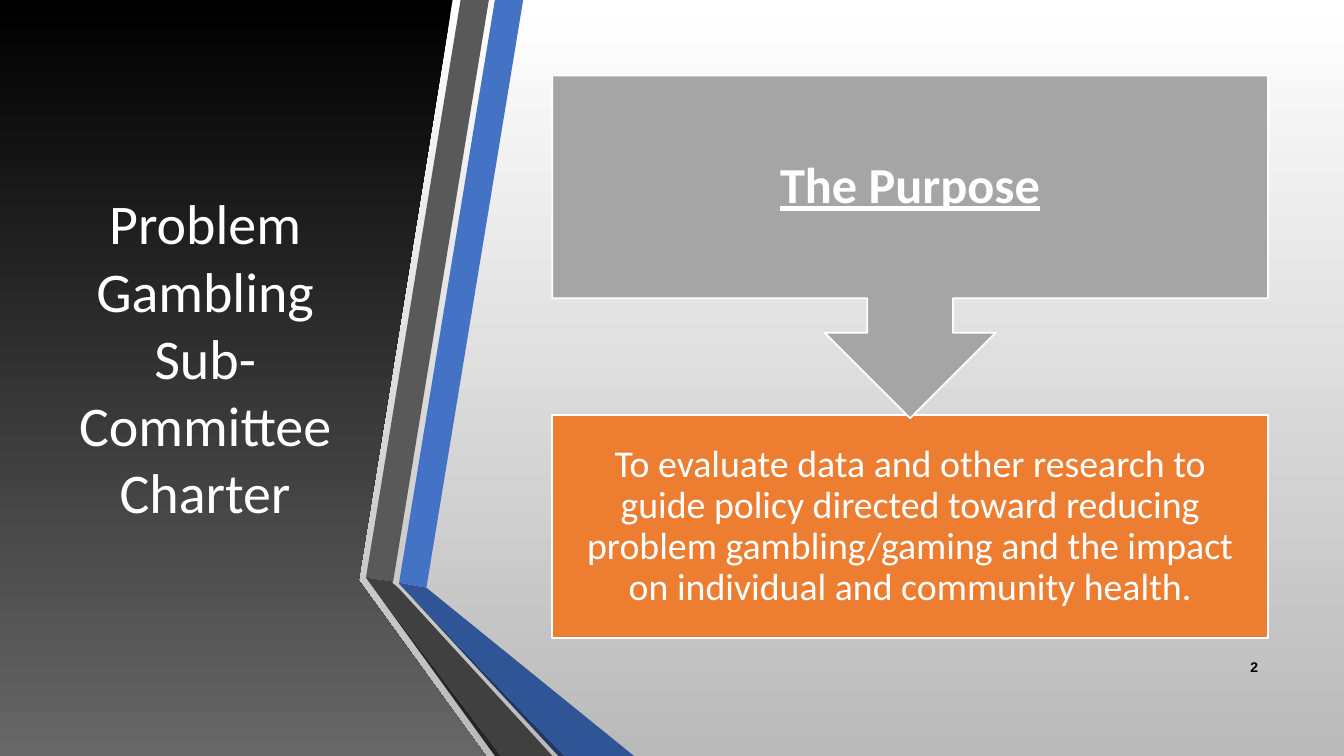
from pptx import Presentation
from pptx.dml.color import RGBColor
from pptx.enum.shapes import MSO_SHAPE
from pptx.enum.text import MSO_ANCHOR, MSO_AUTO_SIZE, PP_ALIGN
from pptx.util import Pt

WHITE = RGBColor(0xFF, 0xFF, 0xFF)
BLACK = RGBColor(0x00, 0x00, 0x00)
SILVER = RGBColor(0xBA, 0xBA, 0xBA)
SMOKE = RGBColor(0x67, 0x67, 0x67)
GRAY = RGBColor(0xA5, 0xA5, 0xA5)
ORANGE = RGBColor(0xED, 0x7D, 0x31)
BLUE = RGBColor(0x44, 0x72, 0xC4)
DEEP_BLUE = RGBColor(0x2F, 0x55, 0x97)
NAVY = RGBColor(0x20, 0x38, 0x64)
STEEL = RGBColor(0x59, 0x59, 0x59)
CHARCOAL = RGBColor(0x40, 0x40, 0x40)
COAL = RGBColor(0x26, 0x26, 0x26)

WIDTH, HEIGHT = 960, 540
BOX_LEFT, BOX_WIDTH, BOX_HEIGHT = 394.5, 511.2, 159.1
PURPOSE_TOP, DETAIL_TOP, CALLOUT_HEIGHT = 54, 296.6, 244.8

PANEL = [(0, 0), (323.3, 0), (256.3, 414), (256.3, 414.7), (347, HEIGHT), (0, HEIGHT)]
RIBBON = [
    (BLUE, [(285.1, 416.2), (304.6, 419.8), (373.7, 0), (353.5, 0)]),
    (STEEL, [(349.2, 0), (329, 0), (261.4, 412.6), (280.8, 415.4)]),
    (COAL, [(261.4, 412.6), (353.5, HEIGHT), (357.8, HEIGHT)]),
    (NAVY, [(285.1, 416.9), (398.9, HEIGHT), (403.2, HEIGHT)]),
    (DEEP_BLUE, [(285.1, 416.9), (403.2, HEIGHT), (452.9, HEIGHT),
                 (304.6, 419.8), (285.1, 416.2)]),
    (CHARCOAL, [(394.6, HEIGHT), (284.4, 419.8), (280.1, 416.2),
                (280.8, 415.4), (261.4, 412.6), (357.8, HEIGHT)]),
]


def fill_gradient(fill, top, bottom):
    fill.gradient()
    fill.gradient_angle = 270
    for stop, position, color in zip(fill.gradient_stops, (0, 1), (top, bottom)):
        stop.position = position
        stop.color.rgb = color


def fill_solid(sp, color):
    sp.fill.solid()
    sp.fill.fore_color.rgb = color


def add_polygon(shapes, points):
    (x, y), *rest = [(Pt(px), Pt(py)) for px, py in points]
    builder = shapes.build_freeform(x, y)
    builder.add_line_segments(rest, close=True)
    sp = builder.convert_to_shape()
    sp.shadow.inherit = False
    sp.line.fill.background()
    return sp


def add_preset(shapes, kind, left, top, width, height):
    sp = shapes.add_shape(kind, Pt(left), Pt(top), Pt(width), Pt(height))
    sp.shadow.inherit = False
    return sp


def add_outlined(shapes, kind, top, height, color):
    sp = add_preset(shapes, kind, BOX_LEFT, top, BOX_WIDTH, height)
    fill_solid(sp, color)
    sp.line.color.rgb = WHITE
    sp.line.width = Pt(1.25)
    return sp


def write(tf, text, size, color=WHITE, font="Calibri", bold=False, underline=False,
          align=PP_ALIGN.CENTER, spacing=1.0, inset=None):
    tf.word_wrap = True
    tf.auto_size = MSO_AUTO_SIZE.NONE
    tf.vertical_anchor = MSO_ANCHOR.MIDDLE
    if inset is not None:
        tf.margin_left = tf.margin_right = tf.margin_top = tf.margin_bottom = Pt(inset)
    p = tf.paragraphs[0]
    p.alignment = align
    p.line_spacing = spacing
    r = p.add_run()
    r.text = text
    r.font.name = font
    r.font.size = Pt(size)
    r.font.bold = bold
    r.font.underline = underline
    r.font.color.rgb = color


def add_text(shapes, left, top, width, height, text, **fmt):
    tb = shapes.add_textbox(Pt(left), Pt(top), Pt(width), Pt(height))
    write(tb.text_frame, text, **fmt)


def add_backdrop(s):
    fill_gradient(s.background.fill, WHITE, SILVER)
    backdrop = add_preset(s.shapes, MSO_SHAPE.RECTANGLE, 0, 0, WIDTH, HEIGHT)
    fill_gradient(backdrop.fill, WHITE, SILVER)
    backdrop.line.fill.background()
    fill_gradient(add_polygon(s.shapes, PANEL).fill, BLACK, SMOKE)


def add_title(s, text):
    """Fill the title placeholder and raise it above the backdrop."""
    title = s.shapes.title
    title.left, title.top, title.width, title.height = map(Pt, (42.5, 54, 208, 401.8))
    title.element.getparent().append(title.element)
    write(title.text_frame, text, size=40)


def add_ribbon(s):
    shapes = s.shapes.add_group_shape().shapes
    for color, points in RIBBON:
        fill_solid(add_polygon(shapes, points), color)


def add_purpose(s):
    shapes = s.shapes.add_group_shape().shapes
    add_outlined(shapes, MSO_SHAPE.RECTANGLE, DETAIL_TOP, BOX_HEIGHT, ORANGE)
    add_text(shapes, BOX_LEFT, DETAIL_TOP, BOX_WIDTH, BOX_HEIGHT,
             "To evaluate data and other research to guide policy directed toward "
             "reducing problem gambling/gaming and the impact on individual and "
             "community health.", size=27, spacing=0.9, inset=15.1)
    callout = add_outlined(shapes, MSO_SHAPE.UP_ARROW_CALLOUT, PURPOSE_TOP,
                           CALLOUT_HEIGHT, GRAY)
    callout.rotation = 180
    add_text(shapes, BOX_LEFT, PURPOSE_TOP, BOX_WIDTH, BOX_HEIGHT, "The Purpose",
             size=36, bold=True, underline=True, spacing=0.9, inset=20.2)


def main():
    prs = Presentation()
    prs.slide_width, prs.slide_height = Pt(WIDTH), Pt(HEIGHT)
    s = prs.slides.add_slide(prs.slide_layouts[5])
    add_backdrop(s)
    add_title(s, "Problem Gambling Sub-Committee Charter")
    add_ribbon(s)
    add_text(s.shapes, 862.6, 462.2, 43.2, 28.8, "2", size=10, color=BLACK,
             font="Arial", bold=True, align=PP_ALIGN.RIGHT)
    add_purpose(s)
    prs.save("out.pptx")


if __name__ == "__main__":
    main()
